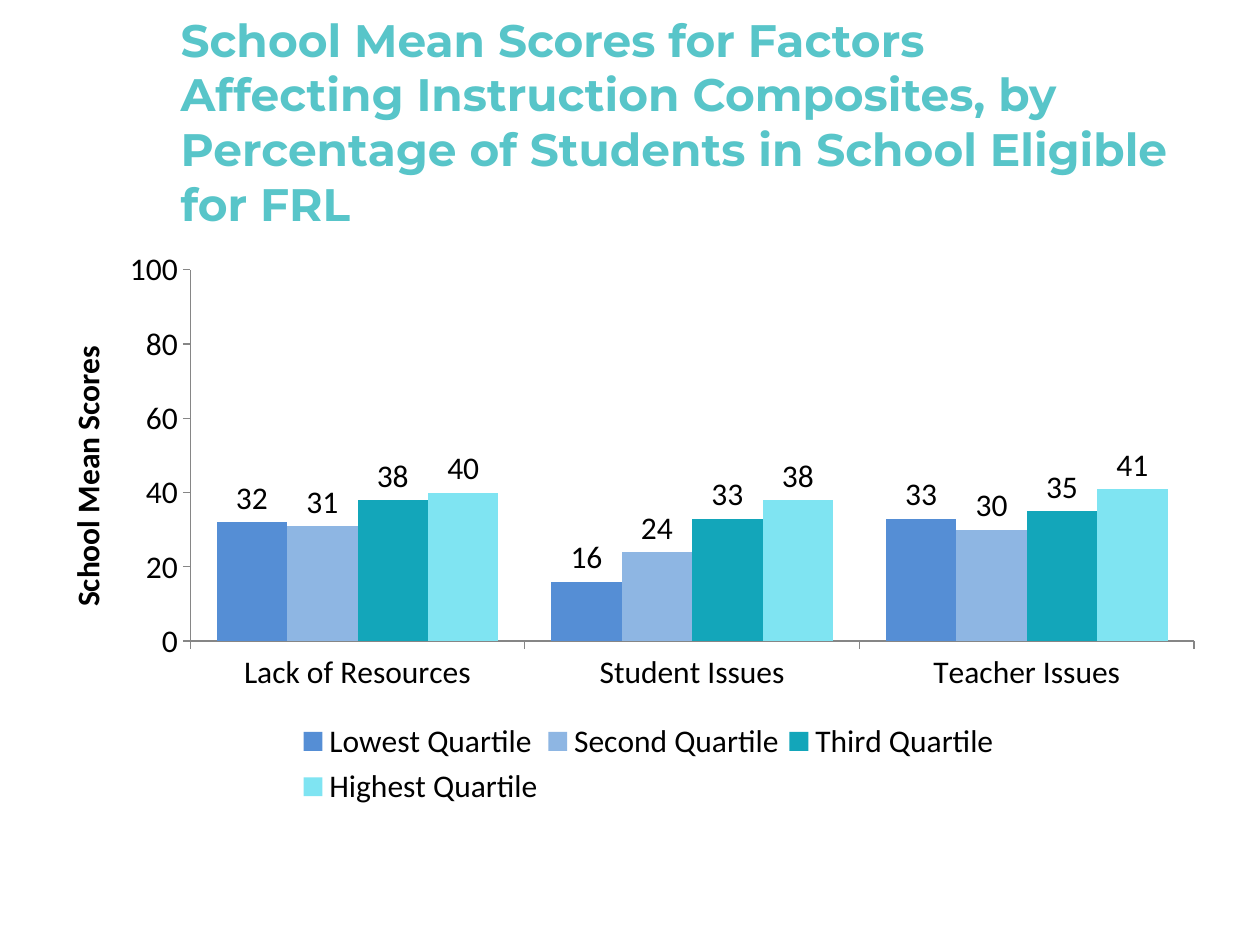
from lxml import etree
from pptx import Presentation
from pptx import util as u
from pptx.chart.data import CategoryChartData
from pptx.dml.color import RGBColor
from pptx.enum import chart as charts, text
from pptx.oxml import ns

PX = u.Inches(1) / 126
BLACK = RGBColor(0x00, 0x00, 0x00)
AXIS_GREY = RGBColor(0x86, 0x86, 0x86)
TITLE_TEAL = RGBColor(0x58, 0xC5, 0xC9)

CATEGORIES = ["Lack of Resources", "Student Issues", "Teacher Issues"]
QUARTILES = [
    ("Lowest Quartile", (32, 16, 33), RGBColor(0x55, 0x8E, 0xD5)),
    ("Second Quartile", (31, 24, 30), RGBColor(0x8E, 0xB6, 0xE3)),
    ("Third Quartile", (38, 33, 35), RGBColor(0x13, 0xA6, 0xBA)),
    ("Highest Quartile", (40, 38, 41), RGBColor(0x7F, 0xE4, 0xF2)),
]


def px(length):
    return u.Emu(round(length * PX))


def format_font(font, name="Calibri", size=18, color=BLACK, bold=False):
    font.name = name
    font.size = u.Pt(size)
    font.color.rgb = color
    font.bold = bold


def write_text(frame, lines, align=text.PP_ALIGN.LEFT, **font_format):
    """Fill a text frame with one formatted paragraph per line."""
    frame.text = "\n".join(lines)
    for paragraph in frame.paragraphs:
        paragraph.alignment = align
        for run in paragraph.runs:
            format_font(run.font, **font_format)


def place_in_chart(element, index, target=None, **fractions):
    """Give a chart part a manual layout, as fractions of the chart area."""
    for old_layout in element.findall(ns.qn("c:layout")):
        element.remove(old_layout)
    layout = etree.Element(ns.qn("c:layout"))
    manual = etree.SubElement(layout, ns.qn("c:manualLayout"))
    settings = {"layoutTarget": target} if target else {}
    settings.update(xMode="edge", yMode="edge", **fractions)
    for tag, value in settings.items():
        etree.SubElement(manual, ns.qn(f"c:{tag}")).set("val", str(value))
    element.insert(index, layout)


class SlideBuilder:
    """Holds the current slide and adds its styled elements."""

    def __init__(self, slide):
        self.slide = slide

    def title(self, lines, left, top, width, height):
        shape = self.slide.shapes.title
        shape.left, shape.top = px(left), px(top)
        shape.width, shape.height = px(width), px(height)
        frame = shape.text_frame
        frame.word_wrap = True
        frame.auto_size = text.MSO_AUTO_SIZE.NONE
        frame.vertical_anchor = text.MSO_ANCHOR.MIDDLE
        write_text(frame, lines, name="Montserrat", size=26,
                   color=TITLE_TEAL, bold=True)
        for paragraph in frame.paragraphs:
            paragraph.space_before = u.Pt(0)

    def column_chart(self, left, top, width, height):
        data = CategoryChartData(number_format="0")
        data.categories = CATEGORIES
        for name, values, _ in QUARTILES:
            data.add_series(name, values)
        chart = self.slide.shapes.add_chart(
            charts.XL_CHART_TYPE.COLUMN_CLUSTERED,
            px(left), px(top), px(width), px(height), data).chart
        chart.has_title = False
        format_font(chart.font)
        self.columns(chart.plots[0])
        self.axes(chart)
        self.legend(chart)
        plot_area = chart.value_axis._element.getparent()
        place_in_chart(plot_area, 0, "inner", x=0.122, y=0.048, w=0.861, h=0.644)

    def columns(self, plot):
        plot.gap_width = 75
        plot.overlap = 0
        plot.vary_by_categories = False
        for series, (_, _, color) in zip(plot.series, QUARTILES):
            series.format.fill.solid()
            series.format.fill.fore_color.rgb = color
            labels = series.data_labels
            labels.show_value = True
            labels.position = charts.XL_LABEL_POSITION.OUTSIDE_END
            format_font(labels.font)

    def axes(self, chart):
        for axis in (chart.category_axis, chart.value_axis):
            axis.has_major_gridlines = False
            axis.major_tick_mark = charts.XL_TICK_MARK.OUTSIDE
            axis.minor_tick_mark = charts.XL_TICK_MARK.NONE
            axis.format.line.color.rgb = AXIS_GREY
            axis.format.line.width = u.Pt(0.75)
            format_font(axis.tick_labels.font)
        scores = chart.value_axis
        scores.minimum_scale, scores.maximum_scale = 0, 100
        scores.major_unit = 20
        write_text(scores.axis_title.text_frame, ["School Mean Scores"],
                   align=text.PP_ALIGN.CENTER, bold=True)
        place_in_chart(scores.axis_title._element, 1, x=0.01, y=0.17)

    def legend(self, chart):
        chart.has_legend = True
        legend = chart.legend
        legend.position = charts.XL_LEGEND_POSITION.BOTTOM
        legend.include_in_layout = False
        format_font(legend.font)
        place_in_chart(legend._element, 1, x=0.21, y=0.82, w=0.61, h=0.17)


def main():
    presentation = Presentation()
    presentation.slide_width, presentation.slide_height = px(1260), px(945)
    title_only = presentation.slide_layouts[5]
    builder = SlideBuilder(presentation.slides.add_slide(title_only))
    builder.column_chart(48, 242, 1166, 577)
    builder.title(["School Mean Scores for Factors",
                   "Affecting Instruction Composites, by Percentage of "
                   "Students in School Eligible for FRL"],
                  168, 42, 1029, 158)
    presentation.save("out.pptx")


if __name__ == "__main__":
    main()
